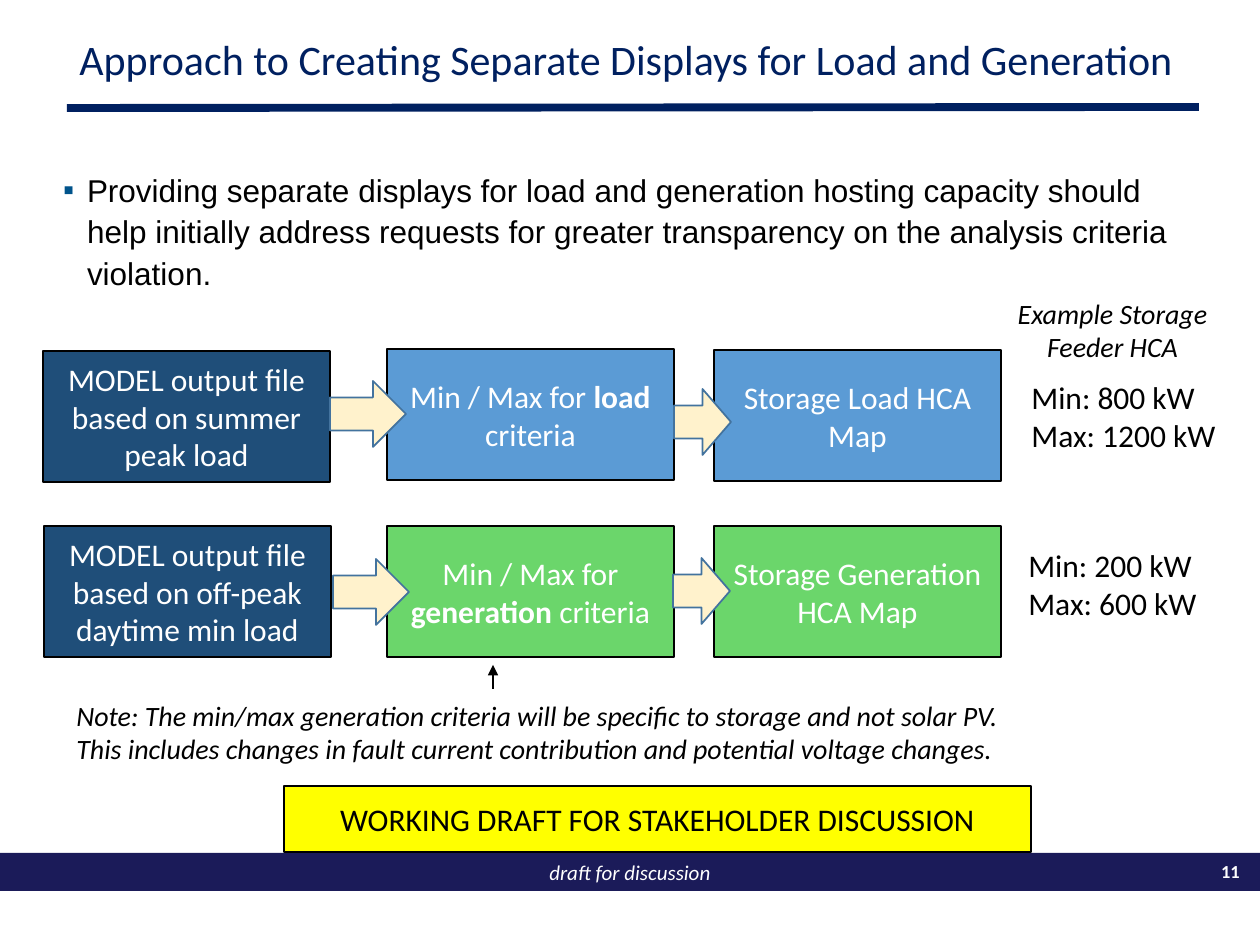
from dataclasses import dataclass

from lxml.etree import SubElement
from pptx import Presentation
from pptx.dml.color import RGBColor
from pptx.enum.shapes import MSO_CONNECTOR, MSO_SHAPE
from pptx.enum.text import MSO_ANCHOR as Anchor, PP_ALIGN as Align
from pptx.oxml.ns import qn
from pptx.util import Emu, Pt

PX = 914400 / 126
BLACK = RGBColor(0x00, 0x00, 0x00)
WHITE = RGBColor(0xFF, 0xFF, 0xFF)
NAVY = RGBColor(0x00, 0x20, 0x60)
FOOTER_BLUE = RGBColor(0x1B, 0x1B, 0x59)
SOURCE_BLUE = RGBColor(0x1F, 0x4E, 0x79)
LOAD_BLUE = RGBColor(0x5B, 0x9B, 0xD5)
GENERATION_GREEN = RGBColor(0x6B, 0xD6, 0x6B)
ARROW_CREAM = RGBColor(0xFF, 0xF2, 0xCC)
ARROW_EDGE = RGBColor(0x43, 0x73, 0x9E)
BANNER_YELLOW = RGBColor(0xFF, 0xFF, 0x00)
BULLET_BLUE = "00538B"

BOX_WIDTH, BOX_HEIGHT = 287, 131
ARROW_HEIGHT = 66


@dataclass(frozen=True)
class FlowBox:
    left: int
    top: int
    fill: RGBColor
    text: str
    bold_part: str = ""


@dataclass(frozen=True)
class FlowArrow:
    left: int
    top: int
    width: int


@dataclass(frozen=True)
class Label:
    left: int
    top: int
    width: int
    height: int
    text: str
    size: float = 18
    color: RGBColor = BLACK
    bold: bool = False
    italic: bool = False
    align: Align = Align.LEFT
    anchor: Anchor = Anchor.TOP
    line_spacing: float = 1.0


FLOW_BOXES = [
    FlowBox(43, 351, SOURCE_BLUE, "MODEL output file based on summer peak load"),
    FlowBox(387, 349, LOAD_BLUE, "Min / Max for load criteria", "load"),
    FlowBox(714, 350, LOAD_BLUE, "Storage Load HCA Map"),
    FlowBox(44, 526, SOURCE_BLUE, "MODEL output file based on off-peak daytime min load"),
    FlowBox(387, 526, GENERATION_GREEN, "Min / Max for generation criteria", "generation "),
    FlowBox(714, 526, GENERATION_GREEN, "Storage Generation HCA Map"),
]

FLOW_ARROWS = [
    FlowArrow(330, 381, 76),
    FlowArrow(674, 389, 57),
    FlowArrow(333, 559, 76),
    FlowArrow(673, 558, 57),
]

LABELS = [
    Label(67, 33, 1133, 57, "Approach to Creating Separate Displays for Load and Generation",
          size=24, color=NAVY, anchor=Anchor.MIDDLE, line_spacing=0.9),
    Label(1019, 372, 241, 89, "Min: 800 kW\nMax: 1200 kW"),
    Label(1016, 540, 241, 89, "Min: 200 kW\nMax: 600 kW"),
    Label(1003, 290, 219, 81, "Example Storage Feeder HCA",
          size=16, italic=True, align=Align.CENTER),
    Label(64, 692, 951, 81,
          "Note: The min/max generation criteria will be specific to storage and not solar PV. "
          "This includes changes in fault current contribution and potential voltage changes.",
          size=16, italic=True),
    Label(1200, 854, 52, 37, "11", size=10.5, color=WHITE, bold=True, align=Align.RIGHT),
]


def px(*lengths: int) -> list[Emu]:
    return [Emu(round(length * PX)) for length in lengths]


def write_text(shape, text: str, *, size: float = 18, color: RGBColor = BLACK,
               font: str = "Calibri", bold: bool = False, italic: bool = False,
               bold_part: str = "", align: Align = Align.LEFT,
               anchor: Anchor = Anchor.TOP, line_spacing: float = 1.0) -> None:
    frame = shape.text_frame
    frame.word_wrap = True
    frame.vertical_anchor = anchor
    for index, line in enumerate(text.split("\n")):
        paragraph = frame.add_paragraph() if index else frame.paragraphs[0]
        paragraph.alignment = align
        paragraph.line_spacing = line_spacing
        parts = line.partition(bold_part) if bold_part else (line,)
        for part in parts:
            run = paragraph.add_run()
            run.text = part
            run.font.name = font
            run.font.size = Pt(size)
            run.font.bold = bold or part == bold_part
            run.font.italic = italic
            run.font.color.rgb = color


def draw_shape(slide, kind: MSO_SHAPE, bounds: tuple, fill: RGBColor,
               edge: RGBColor | None = BLACK):
    shape = slide.shapes.add_shape(kind, *px(*bounds))
    shape.shadow.inherit = False
    shape.fill.solid()
    shape.fill.fore_color.rgb = fill
    if edge is None:
        shape.line.fill.background()
    else:
        shape.line.color.rgb = edge
        shape.line.width = Pt(1)
    return shape


def draw_line(slide, ends: tuple, color: RGBColor, width: float, arrow: bool = False) -> None:
    line = slide.shapes.add_connector(MSO_CONNECTOR.STRAIGHT, *px(*ends))
    line.line.color.rgb = color
    line.line.width = Pt(width)
    if arrow:
        SubElement(line.line._get_or_add_ln(), qn("a:tailEnd"), type="triangle")
    SubElement(line._element.spPr, qn("a:effectLst"))


def draw_label(slide, label: Label) -> None:
    box = slide.shapes.add_textbox(*px(label.left, label.top, label.width, label.height))
    write_text(box, label.text, size=label.size, color=label.color, bold=label.bold,
               italic=label.italic, align=label.align, anchor=label.anchor,
               line_spacing=label.line_spacing)


def draw_flow_box(slide, box: FlowBox) -> None:
    bounds = (box.left, box.top, BOX_WIDTH, BOX_HEIGHT)
    shape = draw_shape(slide, MSO_SHAPE.RECTANGLE, bounds, box.fill)
    write_text(shape, box.text, color=WHITE, bold_part=box.bold_part,
               align=Align.CENTER, anchor=Anchor.MIDDLE)


def draw_flow_arrow(slide, arrow: FlowArrow) -> None:
    bounds = (arrow.left, arrow.top, arrow.width, ARROW_HEIGHT)
    draw_shape(slide, MSO_SHAPE.RIGHT_ARROW, bounds, ARROW_CREAM, ARROW_EDGE)


def draw_bullet(slide, text: str) -> None:
    box = slide.shapes.add_textbox(*px(63, 167, 1113, 203))
    frame = box.text_frame
    frame.margin_left = frame.margin_top = frame.margin_right = frame.margin_bottom = 0
    write_text(box, text, font="Arial", line_spacing=1.1)
    paragraph = frame.paragraphs[0]
    paragraph.space_after = Pt(6)
    indent = px(24)[0]
    properties = paragraph._p.get_or_add_pPr()
    properties.set("marL", str(indent))
    properties.set("indent", str(-indent))
    bullet_color = SubElement(properties, qn("a:buClr"))
    SubElement(bullet_color, qn("a:srgbClr"), val=BULLET_BLUE)
    SubElement(properties, qn("a:buFont"), typeface="Arial")
    SubElement(properties, qn("a:buChar"), char="▪")


def main() -> None:
    presentation = Presentation()
    presentation.slide_width, presentation.slide_height = px(1260, 945)
    slide = presentation.slides.add_slide(presentation.slide_layouts[6])

    footer = draw_shape(slide, MSO_SHAPE.RECTANGLE, (0, 853, 1260, 38), FOOTER_BLUE, None)
    write_text(footer, "draft for discussion", size=12, color=WHITE, italic=True,
               align=Align.CENTER)
    draw_line(slide, (67, 108, 1199, 107), NAVY, 4.5)

    for box in FLOW_BOXES:
        draw_flow_box(slide, box)
    for arrow in FLOW_ARROWS:
        draw_flow_arrow(slide, arrow)
    for label in LABELS:
        draw_label(slide, label)
    draw_bullet(slide, "Providing separate displays for load and generation hosting capacity "
                       "should help initially address requests for greater transparency on "
                       "the analysis criteria violation.")
    draw_line(slide, (493, 689, 493, 665), BLACK, 1, arrow=True)

    banner = draw_shape(slide, MSO_SHAPE.RECTANGLE, (284, 786, 747, 66), BANNER_YELLOW)
    write_text(banner, "WORKING DRAFT FOR STAKEHOLDER DISCUSSION",
               align=Align.CENTER, anchor=Anchor.MIDDLE)
    presentation.save("out.pptx")


if __name__ == "__main__":
    main()
